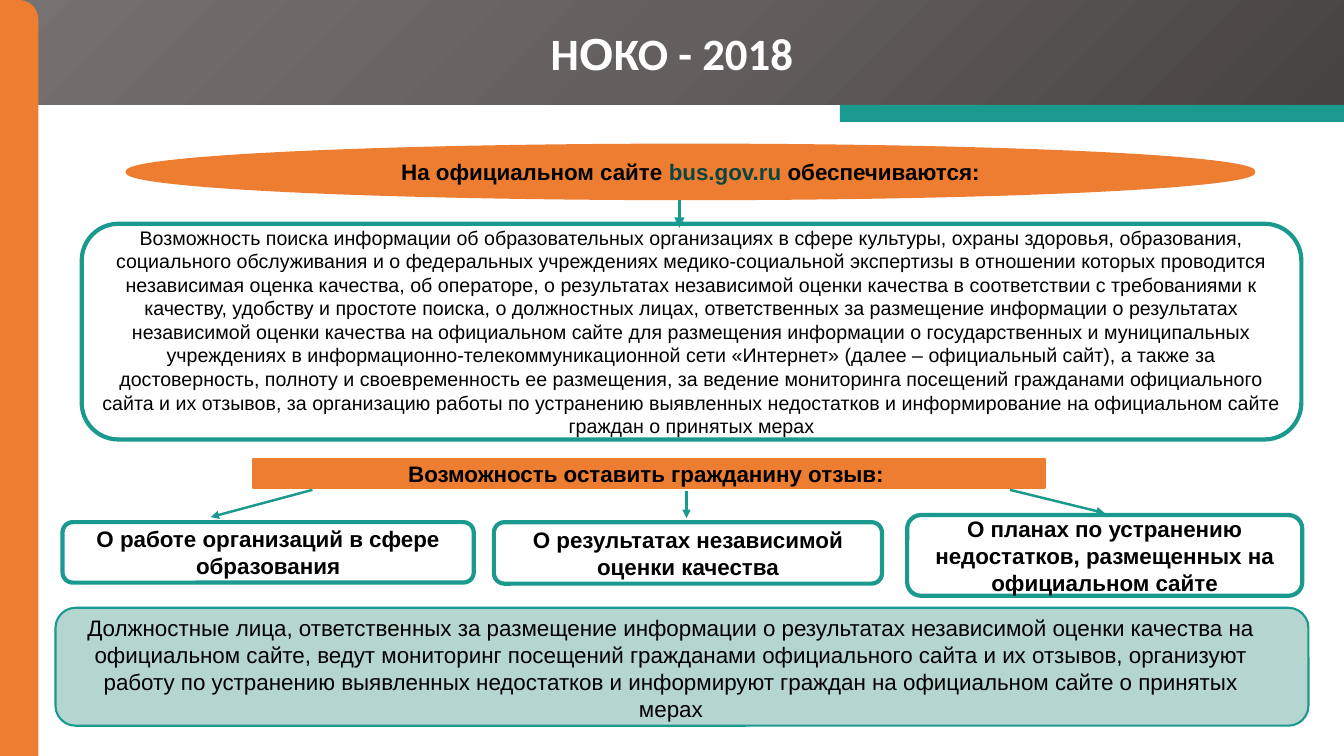
"""Build the slide on the official site's information and feedback duties."""
from copy import deepcopy
from dataclasses import dataclass
from typing import Optional

from pptx import Presentation
from pptx.dml.color import RGBColor
from pptx.enum.shapes import MSO_CONNECTOR as Connector, MSO_SHAPE as Preset
from pptx.enum.text import MSO_ANCHOR as Anchor, PP_ALIGN as Align
from pptx.oxml.ns import qn
from pptx.oxml.xmlchemy import OxmlElement
from pptx.util import Inches, Pt

ORANGE = RGBColor(0xED, 0x7D, 0x31)
TEAL = RGBColor(0x1A, 0x9A, 0x8E)
PALE_TEAL = RGBColor(0xB5, 0xD5, 0xD1)
LINK_TEAL = RGBColor(0x0C, 0x44, 0x3F)
WHITE = RGBColor(0xFF, 0xFF, 0xFF)
BLACK = RGBColor(0x00, 0x00, 0x00)
BAND_STOPS = (
    (0, RGBColor(0x46, 0x43, 0x43)),
    (0.5, RGBColor(0x63, 0x5F, 0x5F)),
    (1, RGBColor(0x76, 0x71, 0x71)),
)
WIDTH, HEIGHT = Inches(13.33), Inches(7.5)


@dataclass(frozen=True)
class Area:
    """Position and size in percent of the slide."""
    left: float
    top: float
    width: float
    height: float

    def emu(self) -> tuple[int, ...]:
        """Return left, top, width and height in EMU."""
        return (across(self.left), down(self.top), across(self.width), down(self.height))


@dataclass(frozen=True)
class Phrase:
    """A piece of text with its own font and colour."""
    text: str
    color: RGBColor = BLACK
    font: str = "Arial"


@dataclass(frozen=True)
class Panel:
    """A filled shape."""
    area: Area
    fill: RGBColor
    outline: Optional[RGBColor] = None
    weight: float = 0
    preset: Preset = Preset.ROUNDED_RECTANGLE
    corner: Optional[float] = 0.17


@dataclass(frozen=True)
class Arrow:
    """An arrow between two points in percent of the slide."""
    start: tuple[float, float]
    end: tuple[float, float]
    weight: float = 1.75


def across(percent: float) -> int:
    """Convert a share of the slide width to EMU."""
    return round(WIDTH * percent / 100)


def down(percent: float) -> int:
    """Convert a share of the slide height to EMU."""
    return round(HEIGHT * percent / 100)


def write(holder, *phrases: Phrase, size: float = 16, bold: bool = False,
          anchor: Anchor = Anchor.MIDDLE, wrap: bool = True) -> None:
    """Write one centred paragraph into a shape."""
    frame = holder.text_frame
    frame.word_wrap = wrap
    frame.vertical_anchor = anchor
    paragraph = frame.paragraphs[0]
    paragraph.alignment = Align.CENTER
    for phrase in phrases:
        run = paragraph.add_run()
        run.text = phrase.text
        run.font.name = phrase.font
        run.font.size = Pt(size)
        run.font.bold = bold
        run.font.color.rgb = phrase.color


def draw_panel(slide, panel: Panel):
    """Draw a panel and return its shape."""
    shape = slide.shapes.add_shape(panel.preset, *panel.area.emu())
    shape.shadow.inherit = False
    shape.fill.solid()
    shape.fill.fore_color.rgb = panel.fill
    if panel.corner is not None:
        shape.adjustments[0] = panel.corner
    if panel.outline is None:
        shape.line.fill.background()
    else:
        shape.line.color.rgb = panel.outline
        shape.line.width = Pt(panel.weight)
    return shape


def draw_arrow(slide, arrow: Arrow) -> None:
    """Draw a teal arrow."""
    (x1, y1), (x2, y2) = arrow.start, arrow.end
    connector = slide.shapes.add_connector(
        Connector.STRAIGHT, across(x1), down(y1), across(x2), down(y2))
    connector.line.color.rgb = TEAL
    connector.line.width = Pt(arrow.weight)
    tip = OxmlElement("a:tailEnd")
    tip.set("type", "triangle")
    properties = connector._element.spPr
    properties.find(qn("a:ln")).append(tip)
    properties.append(OxmlElement("a:effectLst"))


def shade_band(band) -> None:
    """Give the title band its three-stop gradient."""
    band.fill.gradient()
    band.fill.gradient_angle = 135
    stop_list = next(band._element.spPr.iter(qn("a:gsLst")))
    stop_list.append(deepcopy(stop_list[0]))
    for stop, (position, color) in zip(band.fill.gradient_stops, BAND_STOPS):
        stop.position = position
        stop.color.rgb = color


def write_body(slide, area: Area, *texts: str, size: float) -> None:
    """Add a text box with plain body text."""
    write(slide.shapes.add_textbox(*area.emu()), *map(Phrase, texts),
          size=size, anchor=Anchor.TOP)


SEARCH_TEXTS = (
    "Возможность поиска информации об образовательных организациях в сфере культуры, "
    "охраны здоровья, образования, социального обслуживания и о федеральных учреждениях "
    "медико-социальной экспертизы в отношении которых проводится независимая оценка качества, "
    "об операторе, о результатах независимой оценки качества в соответствии с требованиями "
    "к качеству, удобству и простоте поиска, ",
    "о должностных лицах, ответственных за размещение "
    "информации о результатах независимой оценки качества на официальном сайте для размещения "
    "информации о государственных и муниципальных учреждениях в "
    "информационно-телекоммуникационной сети «Интернет» (далее – официальный сайт), ",
    "а также за достоверность, полноту и своевременность ее размещения, за ведение мониторинга "
    "посещений гражданами официального сайта и их отзывов, за организацию работы по устранению "
    "выявленных недостатков и информирование на официальном сайте граждан о принятых мерах",
)
OFFICIALS_TEXT = (
    "Должностные лица, ответственных за размещение информации о результатах независимой оценки "
    "качества на официальном сайте, ведут мониторинг посещений гражданами официального сайта "
    "и их отзывов, организуют работу по устранению выявленных недостатков и информируют граждан "
    "на официальном сайте о принятых мерах"
)
REVIEW_TOPICS = (
    (Area(36.75, 69.07, 28.88, 8.13), "О результатах независимой оценки качества"),
    (Area(4.65, 69.07, 30.6, 8), "О работе организаций в сфере образования"),
    (Area(67.5, 68.13, 29.4, 10.67),
     "О планах по устранению недостатков, размещенных на официальном сайте"),
)
REVIEW_ARROWS = (
    Arrow((23.25, 64.8), (15.68, 68.4)),
    Arrow((75.15, 64.8), (82.2, 67.87)),
    Arrow((51.08, 64.93), (51.08, 68.53)),
)


def main() -> None:
    """Build and save the slide."""
    deck = Presentation()
    deck.slide_width, deck.slide_height = WIDTH, HEIGHT
    slide = deck.slides.add_slide(deck.slide_layouts[6])

    band = draw_panel(slide, Panel(Area(0, 0, 100, 13.87), WHITE,
                                   preset=Preset.RECTANGLE, corner=None))
    shade_band(band)
    write(band, Phrase("Н", WHITE, "Calibri"), Phrase("О", WHITE),
          Phrase("КО - 2018", WHITE, "Calibri"), size=32, bold=True)
    draw_panel(slide, Panel(Area(0, 0, 2.85, 100), ORANGE,
                            preset=Preset.ROUND_1_RECTANGLE, corner=0.5))
    draw_panel(slide, Panel(Area(62.5, 13.87, 37.5, 2.27), TEAL,
                            preset=Preset.RECTANGLE, corner=None))

    site = draw_panel(slide, Panel(Area(9.45, 19.2, 83.85, 7.07), ORANGE, ORANGE, 2.25,
                                   Preset.OVAL, None))
    write(site, Phrase("На официальном сайте "), Phrase("bus.gov.ru ", LINK_TEAL),
          Phrase("обеспечиваются:"), bold=True, wrap=False)
    draw_panel(slide, Panel(Area(6.08, 29.6, 90.75, 28.53), WHITE, TEAL, 3))
    write_body(slide, Area(6.68, 29.2, 89.55, 29.2), *SEARCH_TEXTS, size=14)
    draw_arrow(slide, Arrow((50.55, 26.4), (50.55, 30.13), 2.5))

    review = draw_panel(slide, Panel(Area(18.83, 60.67, 58.95, 3.87), ORANGE, ORANGE, 1.5,
                                     corner=0))
    write(review, Phrase("Возможность оставить гражданину отзыв: "), bold=True, wrap=False)
    for area, topic in REVIEW_TOPICS:
        write(draw_panel(slide, Panel(area, WHITE, TEAL, 3)), Phrase(topic), bold=True)
    for arrow in REVIEW_ARROWS:
        draw_arrow(slide, arrow)

    draw_panel(slide, Panel(Area(4.13, 80.4, 93.23, 15.6), PALE_TEAL, TEAL, 1.5))
    write_body(slide, Area(5.03, 80.6, 89.78, 19), OFFICIALS_TEXT, size=16)
    deck.save("out.pptx")


if __name__ == "__main__":
    main()
